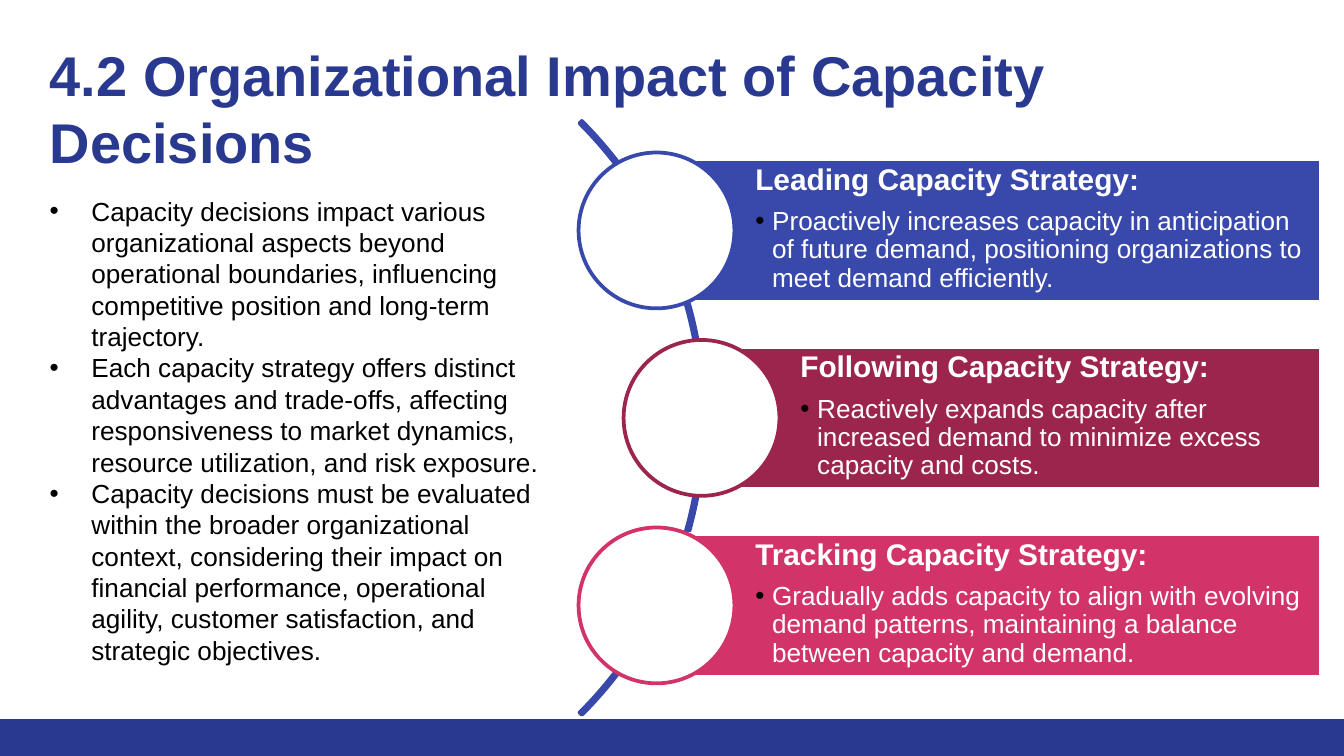
"""Build the slide on the organizational impact of capacity decisions."""
from lxml import etree
from pptx import Presentation
from pptx import util as u
from pptx.dml.color import RGBColor
from pptx.enum import shapes, text
from pptx.oxml import ns

SCALE = 4572
WIDTH, HEIGHT = 2000, 1125
NAVY, BLUE, WINE, PINK = "2A3990", "3949AB", "9C254D", "D23369"
WHITE, BLACK = "FFFFFF", "000000"
TITLE = "4.2 Organizational Impact of Capacity Decisions"
POINTS = [
    "Capacity decisions impact various organizational aspects beyond operational "
    "boundaries, influencing competitive position and long-term trajectory.",
    "Each capacity strategy offers distinct advantages and trade-offs, affecting "
    "responsiveness to market dynamics, resource utilization, and risk exposure.",
    "Capacity decisions must be evaluated within the broader organizational context, "
    "considering their impact on financial performance, operational agility, "
    "customer satisfaction, and strategic objectives.",
]
STRATEGIES = [
    ("Leading Capacity Strategy:",
     "Proactively increases capacity in anticipation of future demand, positioning "
     "organizations to meet demand efficiently.", BLUE, 0),
    ("Following Capacity Strategy:",
     "Reactively expands capacity after increased demand to minimize excess "
     "capacity and costs.", WINE, 67),
    ("Tracking Capacity Strategy:",
     "Gradually adds capacity to align with evolving demand patterns, maintaining "
     "a balance between capacity and demand.", PINK, 0),
]


def px(length):
    """Turn px into EMU."""
    return u.Emu(length * SCALE)


def color(value):
    """Turn a hex string into a colour."""
    return RGBColor.from_string(value)


def place(shape, box):
    """Move a shape to a box of left, top, width and height."""
    shape.left, shape.top, shape.width, shape.height = map(px, box)


def add_shape(slide, kind, box, fill=None, line=None):
    """Add a flat preset shape with an optional fill and 2 pt line."""
    shape = slide.shapes.add_shape(kind, *map(px, box))
    shape.shadow.inherit = False
    if fill:
        shape.fill.solid()
        shape.fill.fore_color.rgb = color(fill)
    else:
        shape.fill.background()
    if line:
        shape.line.color.rgb = color(line)
        shape.line.width = u.Pt(2)
    else:
        shape.line.fill.background()
    return shape


def set_frame(frame, insets, fit=text.MSO_AUTO_SIZE.NONE):
    """Set wrapping, top anchor and insets of a text frame."""
    frame.word_wrap = True
    frame.auto_size = fit
    frame.vertical_anchor = text.MSO_ANCHOR.TOP
    (frame.margin_left, frame.margin_top,
     frame.margin_right, frame.margin_bottom) = map(px, insets)


def write(paragraph, words, size, fill, bold=False, spacing=1.0, after=0):
    """Add one left-aligned Arial run to a paragraph."""
    paragraph.alignment = text.PP_ALIGN.LEFT
    paragraph.line_spacing = spacing
    paragraph.space_before, paragraph.space_after = u.Pt(0), u.Pt(after)
    run = paragraph.add_run()
    run.text = words
    run.font.name, run.font.size, run.font.bold = "Arial", u.Pt(size), bold
    run.font.color.rgb = color(fill)


def add_bullet(paragraph, indent):
    """Give a paragraph a black bullet with a hanging indent."""
    properties = paragraph._p.get_or_add_pPr()
    properties.set("marL", str(px(indent)))
    properties.set("indent", str(px(-indent)))
    bullet_color = etree.SubElement(properties, ns.qn("a:buClr"))
    etree.SubElement(bullet_color, ns.qn("a:srgbClr"), val=BLACK)
    etree.SubElement(properties, ns.qn("a:buFont"), typeface="Arial")
    etree.SubElement(properties, ns.qn("a:buChar"), char="•")


def fill_title(title, box):
    """Place and write the slide title."""
    place(title, box)
    set_frame(title.text_frame, (20, 20, 20, 20))
    write(title.text_frame.paragraphs[0], TITLE, 30, NAVY, bold=True)


def fill_points(body, box):
    """Place and write the bulleted list."""
    place(body, box)
    frame = body.text_frame
    set_frame(frame, (20, 10, 20, 10), text.MSO_AUTO_SIZE.SHAPE_TO_FIT_TEXT)
    for index, point in enumerate(POINTS):
        paragraph = frame.add_paragraph() if index else frame.paragraphs[0]
        write(paragraph, point, 14, BLACK)
        add_bullet(paragraph, 62)


def add_strategy(slide, box, heading, detail, fill):
    """Draw one strategy: a banner with a circle over its left end."""
    left, top, width, diameter = box
    radius, inset = diameter // 2, 10
    banner = add_shape(
        slide, shapes.MSO_SHAPE.RECTANGLE,
        (left + radius, top + inset, width - radius, diameter - 2 * inset), fill, WHITE)
    frame = banner.text_frame
    set_frame(frame, (147, 8, 8, 8))
    write(frame.paragraphs[0], heading, 16, WHITE, bold=True, spacing=0.9, after=6)
    paragraph = frame.add_paragraph()
    paragraph.level = 1
    write(paragraph, detail, 14, WHITE, spacing=0.9, after=2)
    add_bullet(paragraph, 25)
    add_shape(slide, shapes.MSO_SHAPE.OVAL, (left, top, diameter, diameter), WHITE, fill)


def add_strategies(slide, box):
    """Draw the arc and the evenly spaced strategies along it."""
    left, top, width, height = box
    size, diameter = 1250, 232
    arc = add_shape(slide, shapes.MSO_SHAPE.BLOCK_ARC,
                    (left - 1062, top + (height - size) // 2, size, size), line=BLUE)
    for index, value in enumerate((189, 27, 0.004)):
        arc.adjustments[index] = value
    step = (height - diameter) // (len(STRATEGIES) - 1)
    for index, (heading, detail, fill, shift) in enumerate(STRATEGIES):
        strategy_box = (left + shift, top + index * step, width - shift, diameter)
        add_strategy(slide, strategy_box, heading, detail, fill)


def main():
    """Build and save the presentation."""
    presentation = Presentation()
    presentation.slide_width, presentation.slide_height = px(WIDTH), px(HEIGHT)
    slide = presentation.slides.add_slide(presentation.slide_layouts[1])
    add_shape(slide, shapes.MSO_SHAPE.RECTANGLE, (0, 1070, WIDTH, HEIGHT - 1070), NAVY)
    fill_title(slide.shapes.title, (54, 40, 1878, 178))
    fill_points(slide.placeholders[1], (54, 280, 794, 728))
    add_strategies(slide, (861, 227, 1104, 790))
    presentation.save("out.pptx")


if __name__ == "__main__":
    main()
